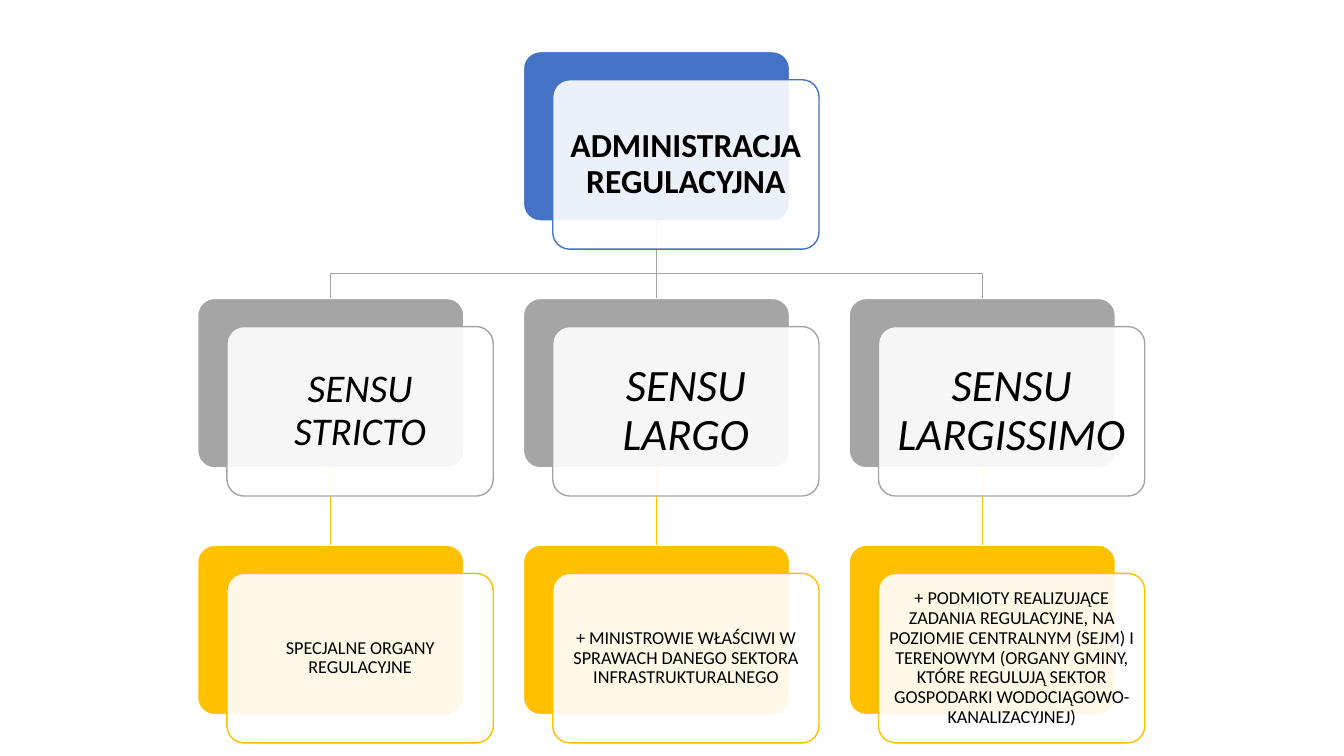
from dataclasses import dataclass

from pptx import Presentation
from pptx.dml.color import RGBColor
from pptx.enum.shapes import MSO_CONNECTOR, MSO_SHAPE
from pptx.enum.text import MSO_ANCHOR, PP_ALIGN
from pptx.oxml.ns import qn
from pptx.util import Cm, Pt
from lxml.etree import SubElement


@dataclass(frozen=True)
class Theme:
    font: str = "Calibri"
    text: RGBColor = RGBColor(0x00, 0x00, 0x00)
    paper: RGBColor = RGBColor(0xFF, 0xFF, 0xFF)
    levels: tuple = (
        RGBColor(0x44, 0x72, 0xC4),
        RGBColor(0xA5, 0xA5, 0xA5),
        RGBColor(0xFF, 0xC0, 0x00),
    )
    title_size: int = 24
    stricto_size: int = 28
    largo_size: int = 32
    detail_size: int = 13
    line_width: int = 1
    alpha: str = "90000"


theme = Theme()

LEFT, TOP = 4.98, 1.3
COLUMN_STEP, ROW_STEP = 8.21, 6.22
WIDTH, HEIGHT = 6.71, 4.27
SHIFT_X, SHIFT_Y = 0.74, 0.71
BRANCH_DROP = 1.32

cards = [
    (0, 1, "ADMINISTRACJA REGULACYJNA", theme.title_size, 0.25),
    (1, 0, "SENSU STRICTO", theme.stricto_size, 0.3),
    (1, 1, "SENSU LARGO", theme.largo_size, 0.34),
    (1, 2, "SENSU LARGISSIMO", theme.largo_size, 0.34),
    (2, 0, "SPECJALNE ORGANY REGULACYJNE", theme.detail_size, 0.14),
    (2, 1, "+ MINISTROWIE WŁAŚCIWI W SPRAWACH DANEGO SEKTORA "
           "INFRASTRUKTURALNEGO", theme.detail_size, 0.14),
    (2, 2, "+ PODMIOTY REALIZUJĄCE ZADANIA REGULACYJNE, NA POZIOMIE "
           "CENTRALNYM (SEJM) I TERENOWYM (ORGANY GMINY, KTÓRE REGULUJĄ "
           "SEKTOR GOSPODARKI WODOCIĄGOWO-KANALIZACYJNEJ)",
     theme.detail_size, 0.14),
]

deck = Presentation()
deck.slide_width, deck.slide_height = Cm(33.87), Cm(19.05)
page = deck.slides.add_slide(deck.slide_layouts[6])


def add_card(left, top, fill_color, line_color):
    card = page.shapes.add_shape(
        MSO_SHAPE.ROUNDED_RECTANGLE, Cm(left), Cm(top), Cm(WIDTH), Cm(HEIGHT))
    card.adjustments[0] = 0.1
    card.shadow.inherit = False
    card.fill.solid()
    card.fill.fore_color.rgb = fill_color
    card.line.color.rgb = line_color
    card.line.width = Pt(theme.line_width)
    return card


back_cards = {}
for row, column, *_ in cards:
    back_cards[row, column] = add_card(
        LEFT + column * COLUMN_STEP, TOP + row * ROW_STEP,
        theme.levels[row], theme.paper)

root_x = LEFT + COLUMN_STEP + WIDTH / 2
root_bottom = TOP + HEIGHT
for column in (0, 2):
    child_x = LEFT + column * COLUMN_STEP + WIDTH / 2
    builder = page.shapes.build_freeform(Cm(root_x), Cm(root_bottom))
    builder.add_line_segments([
        (Cm(root_x), Cm(root_bottom + BRANCH_DROP)),
        (Cm(child_x), Cm(root_bottom + BRANCH_DROP)),
        (Cm(child_x), Cm(TOP + ROW_STEP)),
    ], close=False)
    branch = builder.convert_to_shape()
    branch.shadow.inherit = False
    branch.fill.background()
    branch.line.color.rgb = theme.levels[1]
    branch.line.width = Pt(theme.line_width)

for row, column in [(1, 1), (2, 0), (2, 1), (2, 2)]:
    link = page.shapes.add_connector(MSO_CONNECTOR.STRAIGHT, 0, 0, 0, 0)
    link.begin_connect(back_cards[row - 1, column], 2)
    link.end_connect(back_cards[row, column], 0)
    link.line.color.rgb = theme.levels[row]
    link.line.width = Pt(theme.line_width)
    SubElement(link._element.spPr, qn("a:effectLst"))

for row, column, text, size, margin in cards:
    box = add_card(
        LEFT + column * COLUMN_STEP + SHIFT_X, TOP + row * ROW_STEP + SHIFT_Y,
        theme.paper, theme.levels[row])
    color = box._element.spPr.find(qn("a:solidFill")).find(qn("a:srgbClr"))
    SubElement(color, qn("a:alpha"), val=theme.alpha)
    frame = box.text_frame
    frame.word_wrap = True
    frame.vertical_anchor = MSO_ANCHOR.MIDDLE
    frame.margin_left = frame.margin_right = Cm(margin)
    frame.margin_top = frame.margin_bottom = Cm(margin)
    para = frame.paragraphs[0]
    para.text = text
    para.alignment = PP_ALIGN.CENTER
    para.line_spacing = 0.9
    para.font.name = theme.font
    para.font.size = Pt(size)
    para.font.color.rgb = theme.text
    para.font.bold = row == 0
    para.font.italic = row == 1

deck.save("out.pptx")
